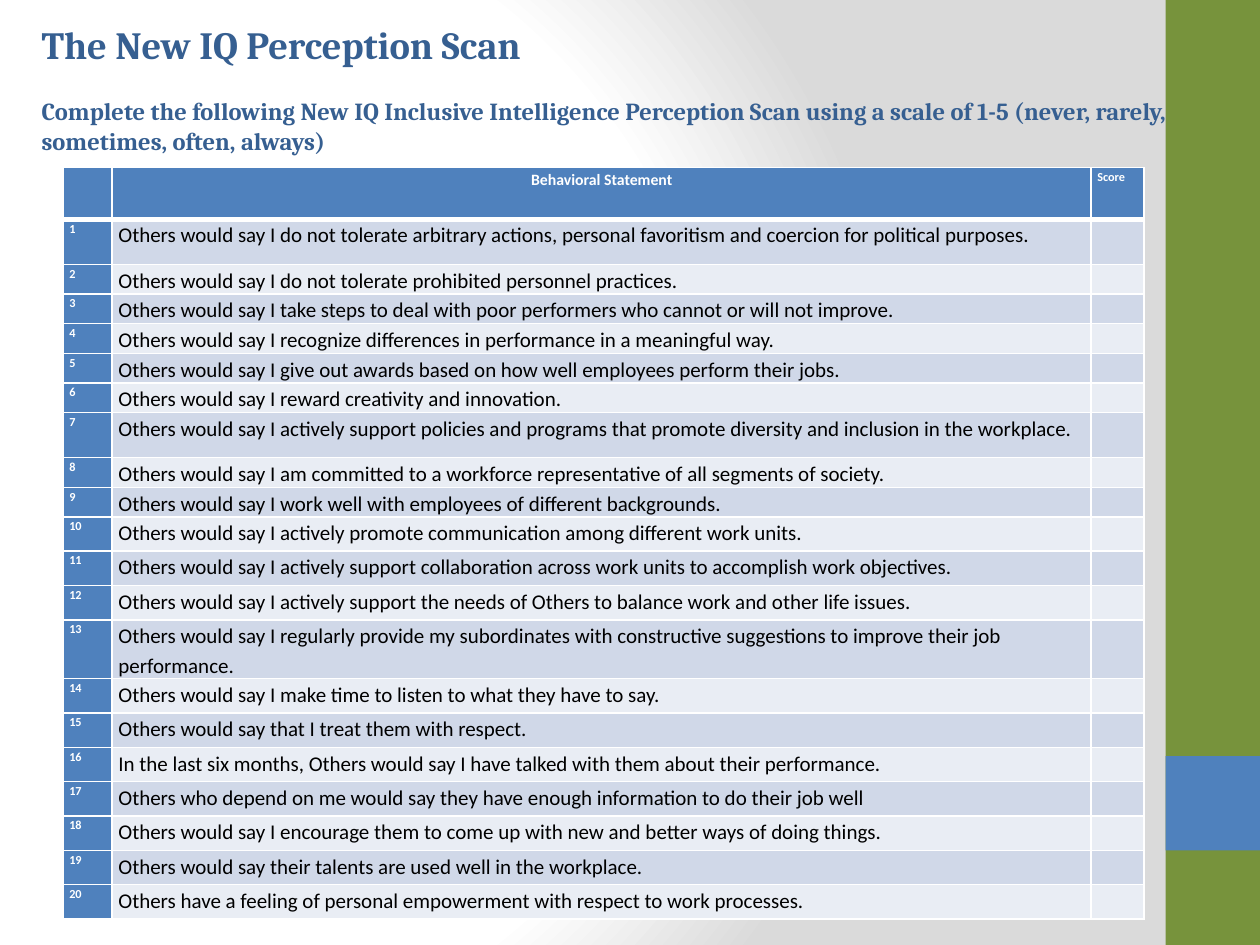
import pptx
import pptx.dml.color
import pptx.enum.shapes
import pptx.enum.text
import pptx.oxml
import pptx.oxml.ns
import pptx.util

GREEN, BLUE, NAVY, WHITE, BLACK = "77933C", "4F81BD", "365F91", "FFFFFF", "000000"
BANDS = ["D0D8E8", "E9EDF4"]
HEADINGS = ["", "Behavioral Statement", "Score"]
STATEMENTS = [
    "Others would say I do not tolerate arbitrary actions, personal favoritism and coercion for political purposes.",
    "Others would say I do not tolerate prohibited personnel practices.",
    "Others would say I take steps to deal with poor performers who cannot or will not improve.",
    "Others would say I recognize differences in performance in a meaningful way.",
    "Others would say I give out awards based on how well employees perform their jobs.",
    "Others would say I reward creativity and innovation.",
    "Others would say I actively support policies and programs that promote diversity and inclusion in the workplace.",
    "Others would say I am committed to a workforce representative of all segments of society.",
    "Others would say I work well with employees of different backgrounds.",
    "Others would say I actively promote communication among different work units.",
    "Others would say I actively support collaboration across work units to accomplish work objectives.",
    "Others would say I actively support the needs of Others to balance work and other life issues.",
    "Others would say I regularly provide my subordinates with constructive suggestions to improve their job performance.",
    "Others would say I make time to listen to what they have to say.",
    "Others would say that I treat them with respect.",
    "In the last six months, Others would say I have talked with them about their performance.",
    "Others who depend on me would say they have enough information to do their job well",
    "Others would say I encourage them to come up with new and better ways of doing things.",
    "Others would say their talents are used well in the workplace.",
    "Others have a feeling of personal empowerment with respect to work processes.",
]
COLUMN_WIDTHS = [1.56, 31.08, 1.68]
HEADER_HEIGHT, COMPACT_HEIGHT, REGULAR_HEIGHT = 1.64, 0.94, 1.09
TALL_HEIGHTS = {1: 1.44, 7: 1.44, 13: 1.84}
LABEL = {"size": 7, "bold": True, "color": WHITE, "name": "Calibri"}
HEADING = {**LABEL, "size": 9}
STATEMENT = {**LABEL, "size": 12, "bold": False, "color": BLACK}
TITLE = {"size": 22, "bold": True, "color": NAVY, "name": "Cambria"}
INSTRUCTION = {**TITLE, "size": 14}


def color(value):
    return pptx.dml.color.RGBColor.from_string(value)


def grid(count):
    return pptx.util.Inches(count / 4)


def set_values(target, values):
    for name, value in values.items():
        setattr(target, name, value)


class SlideBuilder:
    def __init__(self, presentation):
        self.slide = presentation.slides.add_slide(presentation.slide_layouts[6])

    def background(self, stops):
        self.slide.background.fill.solid()
        solid = self.slide.element.find(".//" + pptx.oxml.ns.qn("a:solidFill"))
        stop_xml = "".join(
            f'<a:gs pos="{share * 1000}"><a:srgbClr val="{value}"/></a:gs>' for share, value in stops
        )
        gradient = pptx.oxml.parse_xml(
            f'<a:gradFill rotWithShape="1" {pptx.oxml.ns.nsdecls("a")}><a:gsLst>{stop_xml}</a:gsLst>'
            '<a:path path="circle"><a:fillToRect l="20000" t="50000" r="100000" b="50000"/>'
            "</a:path></a:gradFill>"
        )
        solid.getparent().replace(solid, gradient)

    def rectangle(self, box, fill):
        kind = pptx.enum.shapes.MSO_SHAPE.RECTANGLE
        shape = self.slide.shapes.add_shape(kind, *map(grid, box))
        shape.shadow.inherit = False
        shape.fill.solid()
        shape.fill.fore_color.rgb = color(fill)
        shape.line.fill.background()

    def add_words(self, paragraph, text, style, layout):
        set_values(paragraph, layout)
        run = paragraph.add_run()
        run.text = text
        fonts = {key: value for key, value in style.items() if key not in ("size", "color")}
        set_values(run.font, {**fonts, "size": pptx.util.Pt(style["size"])})
        run.font.color.rgb = color(style["color"])

    def text(self, box, top_inset, lines):
        frame = self.slide.shapes.add_textbox(*map(grid, box)).text_frame
        set_values(frame, {
            "word_wrap": True,
            "vertical_anchor": pptx.enum.text.MSO_ANCHOR.TOP,
            "margin_left": 0, "margin_right": 0, "margin_bottom": 0,
            "margin_top": grid(top_inset),
        })
        for index, (text, style, layout) in enumerate(lines):
            paragraph = frame.add_paragraph() if index else frame.paragraphs[0]
            self.add_words(paragraph, text, style, layout)

    def cell(self, cell, text, style, fill, centered=False, top=1, bottom=1):
        inset = pptx.util.Inches(0.05)
        set_values(cell, {"margin_left": inset, "margin_right": inset, "margin_top": 0, "margin_bottom": 0})
        properties = cell._tc.get_or_add_tcPr()
        for side, width in {"L": 1, "R": 1, "T": top, "B": bottom}.items():
            properties.append(pptx.oxml.parse_xml(
                f'<a:ln{side} w="{pptx.util.Pt(width)}" {pptx.oxml.ns.nsdecls("a")}>'
                f'<a:solidFill><a:srgbClr val="{WHITE}"/></a:solidFill></a:ln{side}>'
            ))
        cell.fill.solid()
        cell.fill.fore_color.rgb = color(fill)
        paragraph = cell.text_frame.paragraphs[0]
        if text:
            alignment = pptx.enum.text.PP_ALIGN.CENTER if centered else pptx.enum.text.PP_ALIGN.LEFT
            self.add_words(paragraph, text, style, {"line_spacing": 1.15, "alignment": alignment})
        else:
            paragraph._p.append(pptx.oxml.parse_xml(
                f'<a:endParaRPr sz="{style["size"] * 100}" {pptx.oxml.ns.nsdecls("a")}/>'
            ))

    def survey(self, left, top):
        heights = [HEADER_HEIGHT] + [
            TALL_HEIGHTS.get(number, COMPACT_HEIGHT if number < 10 else REGULAR_HEIGHT)
            for number in range(1, len(STATEMENTS) + 1)
        ]
        box = (left, top, sum(COLUMN_WIDTHS), sum(heights))
        table = self.slide.shapes.add_table(len(heights), len(COLUMN_WIDTHS), *map(grid, box)).table
        set_values(table, {"first_row": False, "horz_banding": False})
        for column, width in zip(table.columns, COLUMN_WIDTHS):
            column.width = grid(width)
        for row, height in zip(table.rows, heights):
            row.height = grid(height)
        for index, heading in enumerate(HEADINGS):
            style = HEADING if index == 1 else LABEL
            self.cell(table.cell(0, index), heading, style, BLUE, centered=index == 1, bottom=3)
        for number, statement in enumerate(STATEMENTS, 1):
            band = BANDS[(number - 1) % 2]
            contents = [(str(number), LABEL, BLUE), (statement, STATEMENT, band), ("", LABEL, band)]
            for index, content in enumerate(contents):
                self.cell(table.cell(number, index), *content, top=3 if number == 1 else 1)


def main():
    presentation = pptx.Presentation()
    set_values(presentation, {"slide_width": grid(40), "slide_height": grid(30)})
    builder = SlideBuilder(presentation)
    builder.background([(0, WHITE), (75, WHITE), (100, "DADADA")])
    builder.rectangle((37, 0, 3, 30), GREEN)
    builder.rectangle((37, 24, 3, 3), BLUE)
    builder.survey(2, 5.32)
    builder.text((1.32, -0.76, 36.68, 6.88), 1.44, [
        ("The New IQ Perception Scan", TITLE, {}),
        (
            "Complete the following New IQ Inclusive Intelligence Perception Scan using a scale of 1-5 "
            "(never, rarely, sometimes, often, always)",
            INSTRUCTION,
            {"space_before": pptx.util.Pt(16.4)},
        ),
    ])
    presentation.save("out.pptx")


if __name__ == "__main__":
    main()
